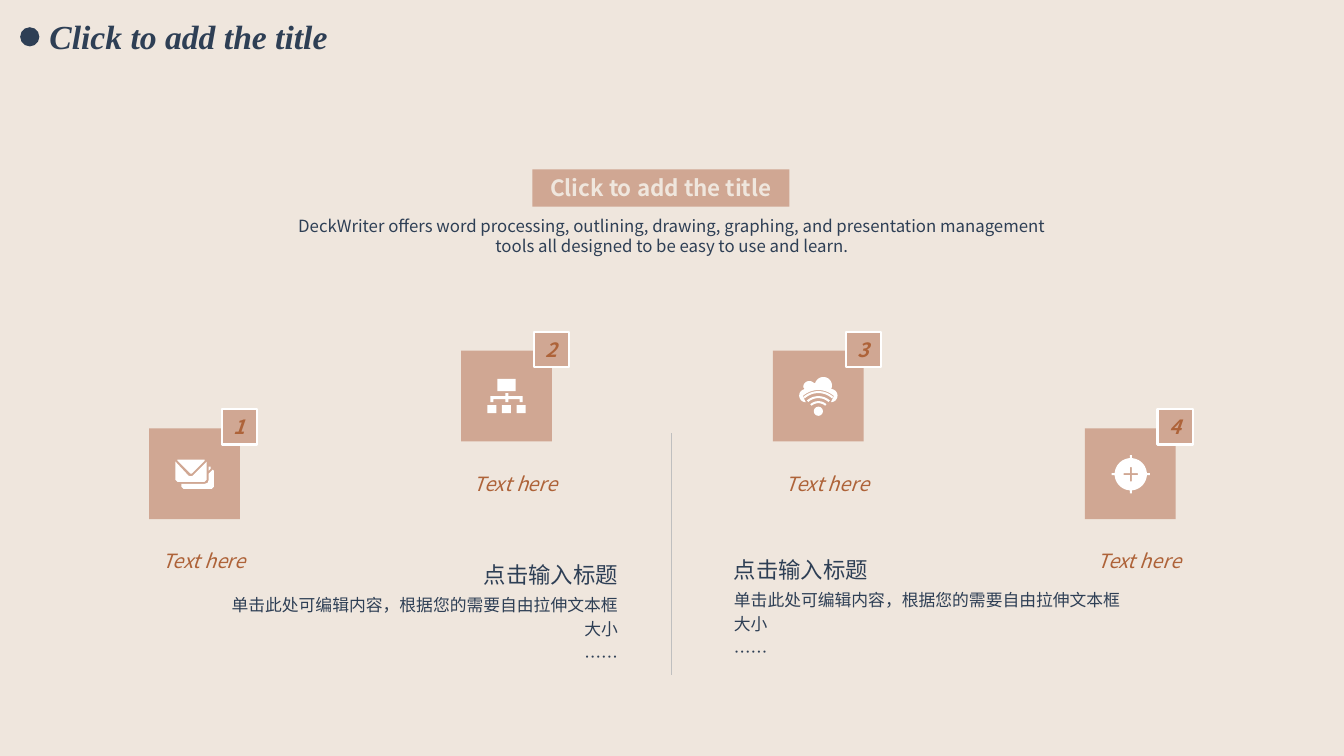
from dataclasses import dataclass
from math import cos, radians, sin

from lxml import etree
from pptx import Presentation
from pptx.dml.color import RGBColor
from pptx.enum.shapes import MSO_CONNECTOR, MSO_SHAPE
from pptx.enum.text import MSO_ANCHOR, MSO_AUTO_SIZE, PP_ALIGN
from pptx.oxml.ns import qn
from pptx.util import Inches, Pt

LEFT, CENTER, RIGHT = PP_ALIGN.LEFT, PP_ALIGN.CENTER, PP_ALIGN.RIGHT
TOP, MIDDLE = MSO_ANCHOR.TOP, MSO_ANCHOR.MIDDLE
RECTANGLE, OVAL = MSO_SHAPE.RECTANGLE, MSO_SHAPE.OVAL
STRAIGHT = MSO_CONNECTOR.STRAIGHT
NO_AUTOFIT = MSO_AUTO_SIZE.NONE
TITLE_ONLY = 5


@dataclass(frozen=True)
class Theme:
    background: str = "EFE6DD"
    navy: str = "2E3F55"
    tile: str = "D0A793"
    rust: str = "AE6339"
    white: str = "FFFFFF"
    divider: str = "BFBFBF"
    title_font: str = "Times New Roman"
    body_font: str = "Noto Sans CJK SC"
    title_size: int = 24
    heading_size: int = 16
    label_size: int = 14
    body_size: int = 12


THEME = Theme()


def write_text(shape, lines, *, sizes, color, font=THEME.body_font, bold=False, italic=False,
               align=LEFT, anchor=TOP, margins=(0.1, 0.05), wrap=True, line_spacing=1.0,
               space_ratio=0):
    """Fill a shape with one paragraph per line, each with its own size."""
    frame = shape.text_frame
    frame.auto_size = NO_AUTOFIT
    frame.word_wrap = wrap
    frame.vertical_anchor = anchor
    frame.margin_left = frame.margin_right = Inches(margins[0])
    frame.margin_top = frame.margin_bottom = Inches(margins[1])
    for index, (line, size) in enumerate(zip(lines, sizes)):
        paragraph = frame.add_paragraph() if index else frame.paragraphs[0]
        paragraph.alignment = align
        paragraph.line_spacing = line_spacing
        paragraph.space_before = Pt(size * space_ratio)
        run = paragraph.add_run()
        run.text = line
        run.font.name = font
        run.font.size = Pt(size)
        run.font.bold = bold
        run.font.italic = italic
        run.font.color.rgb = RGBColor.from_string(color)
        east_asian = etree.SubElement(run.font._element, qn("a:ea"))
        east_asian.set("typeface", font)


# Icon outlines, in hundredths of an inch from the corner of the tile
def box(left, top, right, bottom):
    return [(left, top), (right, top), (right, bottom), (left, bottom)]


def arc(x, y, radius, start, end, steps=24):
    angles = [radians(start + (end - start) * step / steps) for step in range(steps + 1)]
    return [(x + radius * cos(angle), y + radius * sin(angle)) for angle in angles]


def envelope_icon():
    return [
        [(63, 41), (64, 42), (64, 58), (62, 60), (34, 60), (32, 58), (32, 55), (55, 55),
         (58, 54), (59, 51), (59, 45)],
        [(59, 38), (61, 38), (61, 40), (59, 42)],
        [(26, 33), (39, 47), (41, 47.5), (43, 47), (57, 33), (57, 51), (55, 53), (28, 53),
         (26, 51)],
        [(28, 31), (55, 31), (55, 32), (42, 45), (41, 45), (28, 32)],
    ]


def network_icon():
    branches = [(44, 42), (47, 42), (47, 45), (61, 45), (61, 51), (58, 51), (58, 48), (47, 48),
                (47, 51), (44, 51), (44, 48), (32, 48), (32, 51), (29, 51), (29, 45), (44, 45)]
    nodes = [box(left, 54, left + 9, 62) for left in (26, 40.5, 55)]
    return [box(36, 28, 54, 40), branches, *nodes]


def cloud_icon():
    cloud = (arc(32.5, 44.5, 6.5, 90, 260) + arc(36, 36, 6, 180, 310)
             + arc(50, 34.5, 8.5, 195, 385) + arc(57.5, 44.5, 6.5, 270, 450)
             + arc(45, 62, 23, 312, 228))
    waves = [arc(45, 62, radius, 228, 312) + arc(45, 62, radius - 2, 312, 228)
             for radius in (12, 17, 22)]
    return [cloud, *waves, arc(45, 60, 4.5, 0, 360)]


def target_icon():
    center, radius, tip = 45.5, 16, 19
    plus = [(-7, -1), (-1, -1), (-1, -7), (1, -7), (1, -1), (7, -1),
            (7, 1), (1, 1), (1, 7), (-1, 7), (-1, 1), (-7, 1)]
    ticks = [box(-1, -tip, 1, -radius), box(-1, radius, 1, tip),
             box(-tip, -1, -radius, 1), box(radius, -1, tip, 1)]
    outlines = [arc(0, 0, radius, 0, 360, 48), plus, *ticks]
    return [[(center + x, center + y) for x, y in outline] for outline in outlines]


class SlideBuilder:
    def __init__(self, slide, theme):
        self.slide = slide
        self.theme = theme
        slide.background.fill.solid()
        slide.background.fill.fore_color.rgb = RGBColor.from_string(theme.background)

    def paint(self, shape, fill, line=None):
        shape.shadow.inherit = False
        shape.fill.solid()
        shape.fill.fore_color.rgb = RGBColor.from_string(fill)
        if line:
            shape.line.color.rgb = RGBColor.from_string(line)
            shape.line.width = Pt(1.5)
        else:
            shape.line.fill.background()

    def title(self, text, left, top, width, height, **style):
        shape = self.slide.shapes.title
        shape.left, shape.top = Inches(left), Inches(top)
        shape.width, shape.height = Inches(width), Inches(height)
        write_text(shape, [text], **style)

    def text(self, lines, left, top, width, height, **style):
        shape = self.slide.shapes.add_textbox(
            Inches(left), Inches(top), Inches(width), Inches(height))
        write_text(shape, lines, **style)

    def shape(self, kind, left, top, width, height, fill, line=None):
        shape = self.slide.shapes.add_shape(
            kind, Inches(left), Inches(top), Inches(width), Inches(height))
        self.paint(shape, fill, line)
        return shape

    def icon(self, outlines, left, top):
        precision = 100
        builder = self.slide.shapes.build_freeform(
            *[value * precision for value in outlines[0][0]],
            scale=Inches(1) / (100 * precision))
        for index, outline in enumerate(outlines):
            points = [(x * precision, y * precision) for x, y in outline]
            if index:
                builder.move_to(*points[0])
            builder.add_line_segments(points[1:], close=True)
        self.paint(builder.convert_to_shape(Inches(left), Inches(top)), self.theme.white)

    def divider(self, x, top, bottom):
        line = self.slide.shapes.add_connector(
            STRAIGHT, Inches(x), Inches(top), Inches(x), Inches(bottom))
        line.line.color.rgb = RGBColor.from_string(self.theme.divider)
        line.line.width = Pt(0.25)
        etree.SubElement(line._element.spPr, qn("a:effectLst"))

    def step(self, number, outlines, left, top):
        theme = self.theme
        label = dict(sizes=[theme.label_size], color=theme.rust, italic=True,
                     align=CENTER, anchor=MIDDLE)
        self.text(["Text here"], left - 0.75, top + 1.1, 2.58, 0.43, **label)
        self.shape(RECTANGLE, left, top, 0.9, 0.9, theme.tile)
        self.icon(outlines, left, top)
        badge = self.shape(RECTANGLE, left + 0.72, top - 0.19, 0.35, 0.35,
                           theme.tile, theme.white)
        write_text(badge, [str(number)], bold=True, **label)


def main():
    presentation = Presentation()
    presentation.slide_width, presentation.slide_height = Inches(13.33), Inches(7.5)
    slide = presentation.slides.add_slide(presentation.slide_layouts[TITLE_ONLY])
    builder = SlideBuilder(slide, THEME)

    # Title with its bullet
    builder.title("Click to add the title", 0.39, 0.11, 3.15, 0.5, sizes=[THEME.title_size],
                  color=THEME.navy, font=THEME.title_font, bold=True, italic=True, wrap=False)
    builder.shape(OVAL, 0.2, 0.27, 0.19, 0.19, THEME.navy)

    # Four steps, the middle two raised
    first, last = 1.48, 10.76
    icons = [envelope_icon(), network_icon(), cloud_icon(), target_icon()]
    pitch = (last - first) / (len(icons) - 1)
    for index, (outlines, top) in enumerate(zip(icons, (4.25, 3.48, 3.48, 4.25))):
        builder.step(index + 1, outlines, first + pitch * index, top)

    # Two notes beside the divider
    builder.divider(6.66, 4.3, 6.7)
    note = ["点击输入标题", "单击此处可编辑内容，根据您的需要自由拉伸文本框大小", "……"]
    for left, top, align in ((2.29, 5.51, RIGHT), (7.28, 5.46, LEFT)):
        builder.text(note, left, top, 3.84, 1.11, color=THEME.navy, align=align,
                     sizes=[THEME.heading_size, THEME.body_size, THEME.body_size],
                     margins=(0, 0), line_spacing=1.2, space_ratio=0.2)

    # Heading band and introduction
    band = builder.shape(RECTANGLE, 5.28, 1.68, 2.55, 0.37, THEME.tile)
    write_text(band, ["Click to add the title"], sizes=[THEME.heading_size], bold=True,
               color=THEME.background, align=CENTER, anchor=TOP, wrap=False)
    introduction = ("DeckWriter offers word processing, outlining, drawing, graphing, and "
                    "presentation management tools all designed to be easy to use and learn.")
    builder.text([introduction], 2.87, 2.14, 7.59, 0.4, sizes=[THEME.body_size],
                 color=THEME.navy, align=CENTER, margins=(0, 0))

    presentation.save("out.pptx")


if __name__ == "__main__":
    main()
